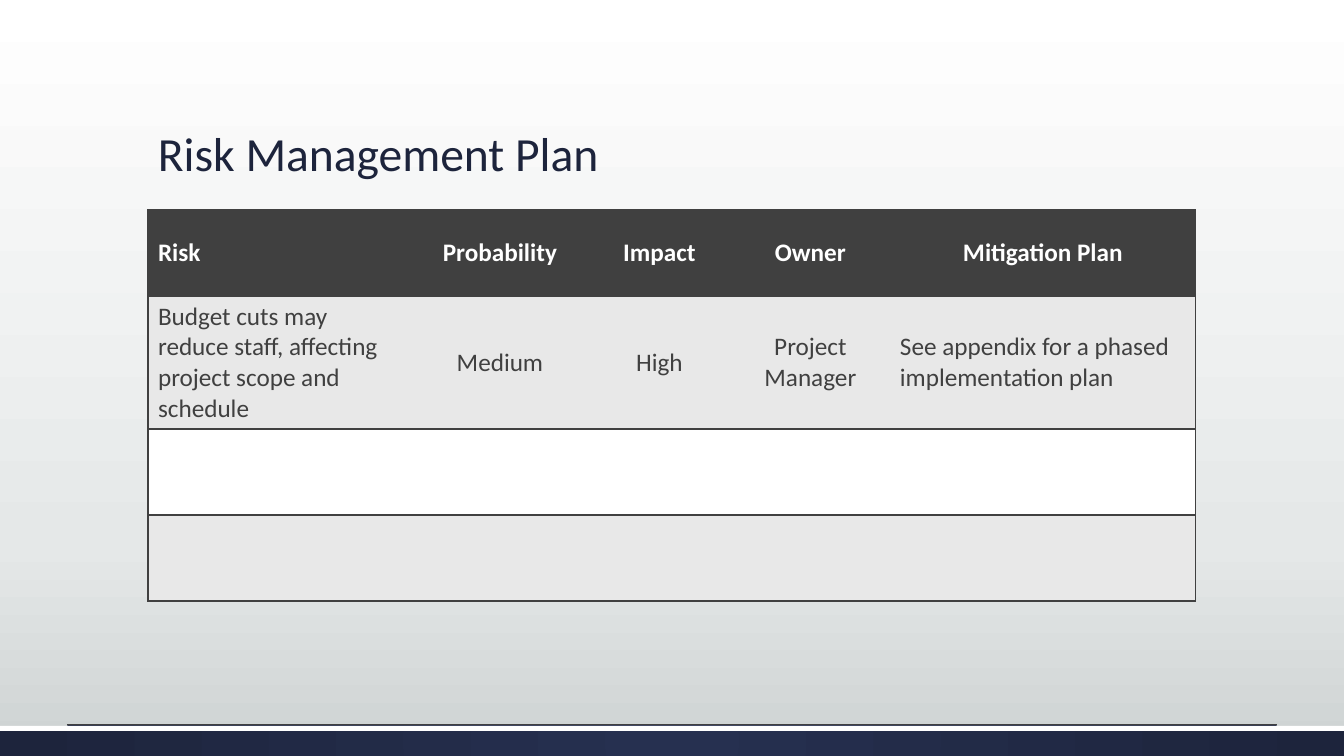
from lxml.etree import SubElement
from pptx import Presentation
from pptx.dml.color import RGBColor
from pptx.enum.shapes import MSO_CONNECTOR, MSO_SHAPE
from pptx.enum.text import MSO_ANCHOR, PP_ALIGN
from pptx.oxml import parse_xml
from pptx.oxml.ns import nsdecls, qn
from pptx.util import Pt

SLIDE_WIDTH, SLIDE_HEIGHT = 1344, 756
EMU_PER_PX = 12192000 / SLIDE_WIDTH
FONT = "Calibri"
NAVY, CHARCOAL, PALE, WHITE = "1D243C", "404040", "E8E8E8", "FFFFFF"

COLUMN_WIDTHS = [264, 176, 143, 159, 306]
ROW_HEIGHTS = [86, 133, 86, 86]
RISKS = [
    ["Risk", "Probability", "Impact", "Owner", "Mitigation Plan"],
    ["Budget cuts may reduce staff, affecting project scope and schedule",
     "Medium", "High", "Project Manager",
     "See appendix for a phased implementation plan"],
]


def px(length):
    return round(length * EMU_PER_PX)


def box_emu(box):
    return [px(length) for length in box]


def color(hex_string):
    return RGBColor.from_string(hex_string)


def set_gradient(gradient, stops, direction):
    """Replace the stops and direction of a gradient fill element."""
    for child in list(gradient):
        gradient.remove(child)
    stop_list = SubElement(gradient, qn("a:gsLst"))
    for percent, hex_string in stops:
        stop = SubElement(stop_list, qn("a:gs"), pos=str(percent * 1000))
        SubElement(stop, qn("a:srgbClr"), val=hex_string)
    gradient.append(parse_xml(direction))


def add_run(paragraph, text, size, hex_string, bold=False):
    run = paragraph.add_run()
    run.text = text
    run.font.name = FONT
    run.font.size = Pt(size)
    run.font.bold = bold
    run.font.color.rgb = color(hex_string)


def add_bar(slide, box):
    bar = slide.shapes.add_shape(MSO_SHAPE.RECTANGLE, *box_emu(box))
    bar.shadow.inherit = False
    bar.line.fill.background()
    return bar


def add_background(slide):
    slide.background.fill.gradient()
    set_gradient(slide.element.find(".//" + qn("a:gradFill")),
                 [(0, WHITE), (72, "E5E8E8"), (100, "CDD2D2")],
                 f'<a:lin {nsdecls("a")} ang="5400000" scaled="0"/>')


def add_footer(slide, box):
    left, top, width, height = box
    # Navy band, lighter in the middle
    band = add_bar(slide, box)
    band.fill.gradient()
    set_gradient(band.element.spPr.find(qn("a:gradFill")),
                 [(0, "263050"), (100, NAVY)],
                 f'<a:path {nsdecls("a")} path="circle">'
                 '<a:fillToRect l="50000" t="50000" r="50000" b="50000"/></a:path>')
    # White strip along the top of the band
    strip = add_bar(slide, (left, top, width, 5))
    strip.fill.solid()
    strip.fill.fore_color.rgb = color(WHITE)
    # Thin rule above the strip
    margin = 67
    rule = slide.shapes.add_connector(
        MSO_CONNECTOR.STRAIGHT, px(left + margin), px(top - 1),
        px(left + width - margin), px(top - 1))
    rule.line.width = Pt(0.75)
    rule.line.color.rgb = color(CHARCOAL)
    SubElement(rule.element.spPr, qn("a:effectLst"))


def add_title(slide, box):
    frame = slide.shapes.add_textbox(*box_emu(box)).text_frame
    frame.word_wrap = True
    frame.vertical_anchor = MSO_ANCHOR.BOTTOM
    paragraph = frame.paragraphs[0]
    paragraph.line_spacing = 0.9
    add_run(paragraph, "Risk Management Plan", 34, NAVY)


def set_borders(cell, visible_sides):
    properties = cell._tc.get_or_add_tcPr()
    for index, side in enumerate("LRTB"):
        fill = (f'<a:solidFill><a:srgbClr val="{CHARCOAL}"/></a:solidFill>'
                if side in visible_sides else "<a:noFill/>")
        properties.insert(index, parse_xml(
            f'<a:ln{side} {nsdecls("a")} w="12700">{fill}</a:ln{side}>'))


def add_risk_table(slide, box):
    table = slide.shapes.add_table(
        len(ROW_HEIGHTS), len(COLUMN_WIDTHS), *box_emu(box)).table
    table.first_row = table.horz_banding = False
    for column, width in zip(table.columns, COLUMN_WIDTHS):
        column.width = px(width)
    last = len(COLUMN_WIDTHS) - 1
    for row_index, height in enumerate(ROW_HEIGHTS):
        table.rows[row_index].height = px(height)
        header = row_index == 0
        row_fill = CHARCOAL if header else PALE if row_index % 2 else WHITE
        for column_index in range(last + 1):
            cell = table.cell(row_index, column_index)
            cell.vertical_anchor = MSO_ANCHOR.MIDDLE
            cell.fill.solid()
            cell.fill.fore_color.rgb = color(row_fill)
            # Rules between rows, closed only at the outer edges
            set_borders(cell, "TB" + "L" * (column_index == 0)
                        + "R" * (column_index == last))
            if row_index < len(RISKS):
                paragraph = cell.text_frame.paragraphs[0]
                left_aligned = column_index == 0 or (
                    column_index == last and not header)
                paragraph.alignment = (
                    PP_ALIGN.LEFT if left_aligned else PP_ALIGN.CENTER)
                add_run(paragraph, RISKS[row_index][column_index], 18,
                        WHITE if header else CHARCOAL, header)


def main():
    presentation = Presentation()
    presentation.slide_width = px(SLIDE_WIDTH)
    presentation.slide_height = px(SLIDE_HEIGHT)
    slide = presentation.slides.add_slide(presentation.slide_layouts[6])
    add_background(slide)
    add_footer(slide, (0, 726, SLIDE_WIDTH, 30))
    add_title(slide, (148, 51, 1048, 136))
    add_risk_table(slide, (148, 210, sum(COLUMN_WIDTHS), sum(ROW_HEIGHTS)))
    presentation.save("out.pptx")


if __name__ == "__main__":
    main()
